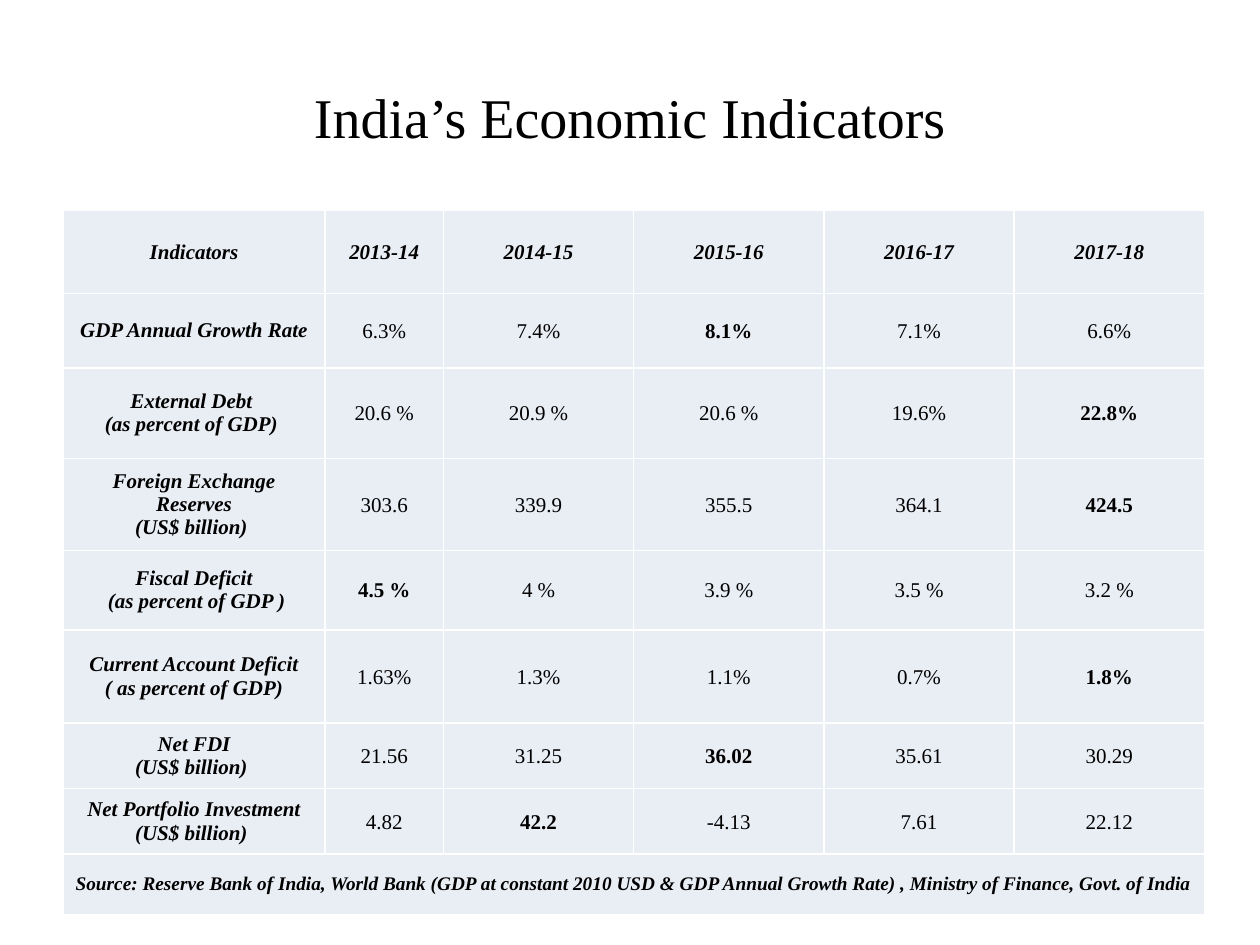
"""Build a slide with a table of India's economic indicators."""

from dataclasses import dataclass

from lxml.etree import SubElement
from pptx import Presentation
from pptx.dml.color import RGBColor
from pptx.enum.text import MSO_ANCHOR as Anchor, PP_ALIGN as Align
from pptx.oxml import parse_xml
from pptx.oxml.ns import nsdecls, qn
from pptx.slide import Slide
from pptx.table import _Cell as Cell
from pptx.text.text import TextFrame
from pptx.util import Inches, Pt


@dataclass(frozen=True)
class Theme:
    font: str = "Times New Roman"
    ink: str = "000000"
    cell: str = "E9EDF4"
    border: str = "FFFFFF"
    border_width: int = Pt(1)
    title_size: int = 32
    cell_size: int = 12
    source_size: int = 11


@dataclass(frozen=True)
class Indicator:
    label: str
    values: tuple[str, ...]
    height: float

    def peak(self) -> str:
        return max(self.values, key=lambda value: float(value.rstrip(" %")))


THEME = Theme()
TITLE = "India’s Economic Indicators"
YEARS = ("2013-14", "2014-15", "2015-16", "2016-17", "2017-18")
INDICATORS = (
    Indicator("GDP Annual Growth Rate", ("6.3%", "7.4%", "8.1%", "7.1%", "6.6%"), 0.59),
    Indicator("External Debt \n(as percent of GDP) ",
              ("20.6 %", "20.9 %", "20.6 %", "19.6%", "22.8%"), 0.72),
    Indicator("Foreign Exchange Reserves\n(US$ billion) ",
              ("303.6", "339.9", "355.5", "364.1", "424.5"), 0.73),
    Indicator("Fiscal Deficit\n (as percent of GDP )",
              ("4.5 %", "4 %", "3.9 %", "3.5 %", "3.2 %"), 0.63),
    Indicator("Current Account Deficit\n( as percent of GDP)",
              ("1.63%", "1.3%", "1.1%", "0.7%", "1.8%"), 0.74),
    Indicator("Net FDI\n(US$ billion) ",
              ("21.56", "31.25", "36.02", "35.61", "30.29"), 0.52),
    Indicator("Net Portfolio Investment\n(US$ billion) ",
              ("4.82", "42.2", "-4.13", "7.61", "22.12"), 0.52),
)
SOURCE = ("Source: Reserve Bank of India, World Bank (GDP at constant 2010 USD & "
          "GDP Annual Growth Rate) , Ministry of Finance, Govt. of India")
COLUMN_WIDTHS = (2.08, 0.94) + (1.51,) * 4
HEADER_HEIGHT = 0.66
SOURCE_HEIGHT = 0.48


def write(frame: TextFrame, text: str, size: int, bold: bool = False,
          italic: bool = False, align: Align = Align.CENTER) -> None:
    frame.text = text
    for para in frame.paragraphs:
        para.alignment = align
        for span in para.runs:
            span.font.name = THEME.font
            span.font.size = Pt(size)
            span.font.bold = bold
            span.font.italic = italic
            span.font.color.rgb = RGBColor.from_string(THEME.ink)


def style_cell(cell: Cell) -> None:
    cell.vertical_anchor = Anchor.MIDDLE
    cell.fill.solid()
    cell.fill.fore_color.rgb = RGBColor.from_string(THEME.cell)
    properties = cell._tc.get_or_add_tcPr()
    for position, side in enumerate(("lnL", "lnR", "lnT", "lnB")):
        line = parse_xml(f'<a:{side} {nsdecls("a")} w="{THEME.border_width}"/>')
        fill = SubElement(line, qn("a:solidFill"))
        SubElement(fill, qn("a:srgbClr")).set("val", THEME.border)
        properties.insert(position, line)


def write_value(cell: Cell, value: str, bold: bool) -> None:
    cell.margin_left = cell.margin_right = cell.margin_top = Inches(0.01)
    cell.margin_bottom = 0
    write(cell.text_frame, value, THEME.cell_size, bold)


def add_title(page: Slide) -> None:
    title = page.shapes.title
    title.left, title.top = Inches(0.5), Inches(0.3)
    title.width, title.height = Inches(9), Inches(1.25)
    title.text_frame.vertical_anchor = Anchor.MIDDLE
    write(title.text_frame, TITLE, THEME.title_size)


def add_indicator_table(page: Slide) -> None:
    heights = (HEADER_HEIGHT, *(item.height for item in INDICATORS), SOURCE_HEIGHT)
    table = page.shapes.add_table(
        len(heights), len(COLUMN_WIDTHS), Inches(0.5), Inches(1.67),
        Inches(sum(COLUMN_WIDTHS)), Inches(sum(heights))).table
    table.first_row = table.horz_banding = False
    for column, width in zip(table.columns, COLUMN_WIDTHS):
        column.width = Inches(width)
    for row, height in zip(table.rows, heights):
        row.height = Inches(height)
    for cell in table.iter_cells():
        style_cell(cell)

    for column, heading in enumerate(("Indicators", *YEARS)):
        write(table.cell(0, column).text_frame, heading, THEME.cell_size, True, True)
    for row, item in enumerate(INDICATORS, 1):
        write(table.cell(row, 0).text_frame, item.label, THEME.cell_size, True, True)
        for column, value in enumerate(item.values, 1):
            write_value(table.cell(row, column), value, value == item.peak())

    last_row = len(heights) - 1
    source = table.cell(last_row, 0)
    source.merge(table.cell(last_row, len(COLUMN_WIDTHS) - 1))
    write(source.text_frame, SOURCE, THEME.source_size, True, True, Align.LEFT)


def main() -> None:
    deck = Presentation()
    deck.slide_width, deck.slide_height = Inches(10), Inches(7.5)
    page = deck.slides.add_slide(deck.slide_layouts[5])
    add_title(page)
    add_indicator_table(page)
    deck.save("out.pptx")


if __name__ == "__main__":
    main()
